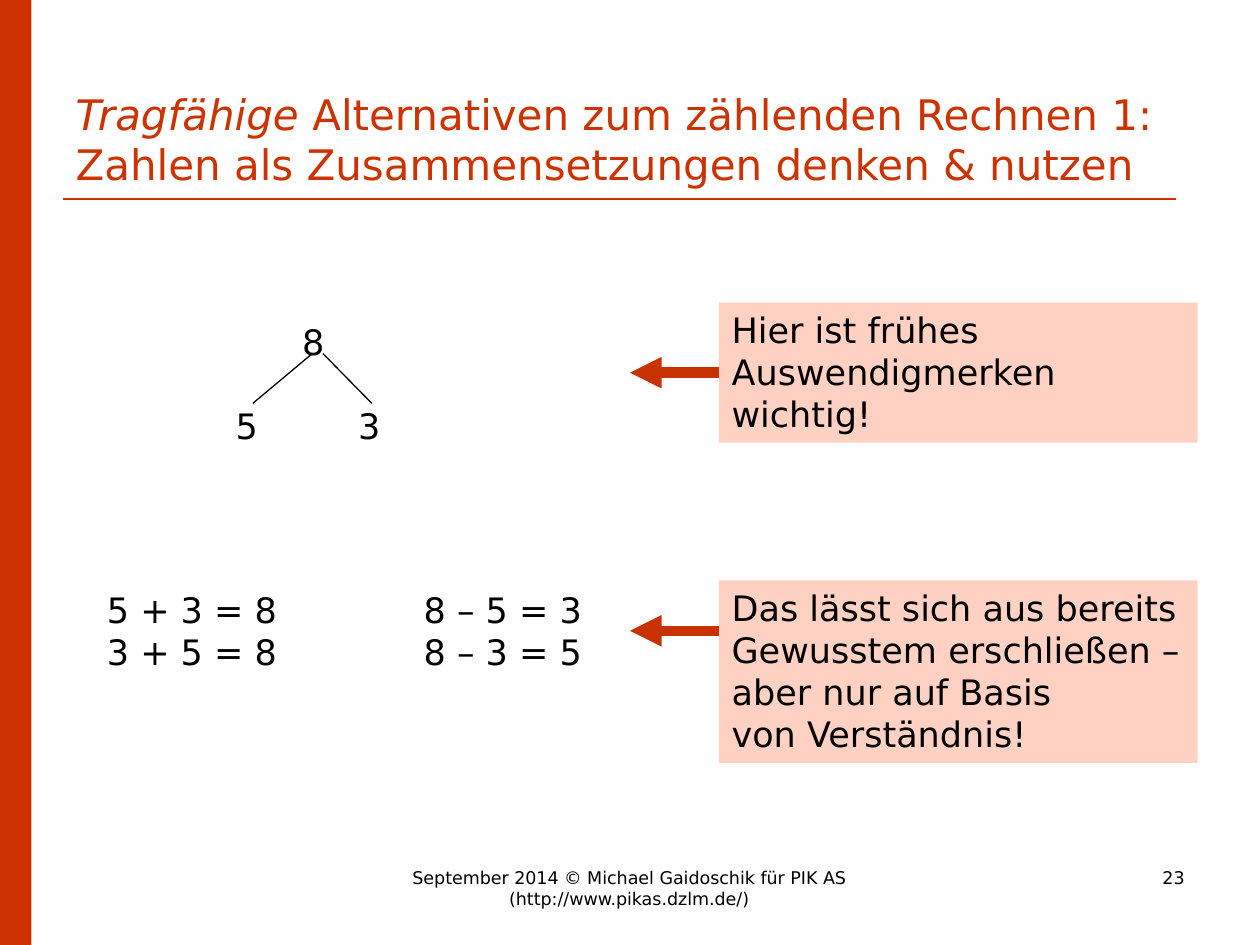
from lxml import etree
from pptx import Presentation
from pptx.dml.color import RGBColor
from pptx.enum import shapes, text
from pptx.oxml import ns
from pptx.util import Pt

FONT = "DejaVu Sans"
COLORS = {"red": "CC3300", "arrow": "C83200", "box": "FFD1C2", "black": "000000"}


def write(shape, paragraphs, size=20, color="black", align=text.PP_ALIGN.LEFT, wrap=True):
    """Fill a shape with paragraphs; each is a list of (words, italic) runs or "\\v" breaks."""
    frame = shape.text_frame
    frame.word_wrap = wrap
    for index, runs in enumerate(paragraphs):
        paragraph = frame.paragraphs[0] if index == 0 else frame.add_paragraph()
        paragraph.alignment = align
        for item in runs:
            if item == "\v":
                paragraph.add_line_break()
                continue
            run = paragraph.add_run()
            run.text, run.font.italic = item
            run.font.name, run.font.size = FONT, Pt(size)
            run.font.color.rgb = RGBColor.from_string(COLORS[color])
    return frame


def draw_line(x1, y1, x2, y2, color, width, arrow=False):
    line = slide.shapes.add_connector(
        shapes.MSO_CONNECTOR.STRAIGHT, Pt(x1), Pt(y1), Pt(x2), Pt(y2))
    line.line.color.rgb = RGBColor.from_string(COLORS[color])
    line.line.width = Pt(width)
    if arrow:
        etree.SubElement(line.line._get_or_add_ln(), ns.qn("a:tailEnd"), type="triangle")
    etree.SubElement(line._element.spPr, ns.qn("a:effectLst"))


presentation = Presentation()
presentation.slide_width, presentation.slide_height = Pt(720), Pt(540)
slide = presentation.slides.add_slide(presentation.slide_layouts[5])

# Side bar, title and rule
bar = slide.shapes.add_shape(shapes.MSO_SHAPE.RECTANGLE, 0, 0, Pt(18), Pt(540))
bar.shadow.inherit = False
bar.fill.solid()
bar.fill.fore_color.rgb = RGBColor.from_string(COLORS["red"])
bar.line.fill.background()

title = slide.shapes.title
title.left, title.top, title.width, title.height = Pt(36), Pt(21.6), Pt(669.6), Pt(90)
title_frame = write(title, [[
    ("Tragfähige", True), (" Alternativen zum zählenden Rechnen 1:", False), "\v",
    ("Zahlen als Zusammensetzungen denken & nutzen", False)]], size=24, color="red")
title_frame.vertical_anchor = text.MSO_ANCHOR.BOTTOM
title_frame.auto_size = text.MSO_AUTO_SIZE.NONE
draw_line(36, 113.75, 672, 113.75, "red", 1.5)

# Number bond: the whole above its two parts, placed by tab stops
bond = slide.shapes.add_textbox(Pt(127.5), Pt(179.5), Pt(120), Pt(79))
bond_frame = write(bond, [[("\t8", False)], [("5\t3", False)]])
for paragraph, stop in zip(bond_frame.paragraphs, (38, 70)):
    tabs = etree.SubElement(paragraph._p.get_or_add_pPr(), ns.qn("a:tabLst"))
    etree.SubElement(tabs, ns.qn("a:tab"), pos=str(Pt(stop)), algn="l")
bond_frame.paragraphs[1].space_before = Pt(24)
draw_line(178.5, 202, 144.5, 230.5, "black", 0.75)
draw_line(184.5, 202, 212.5, 230.5, "black", 0.75)

# Equations
for left, width, equations in [
        (54, 114, ["5 + 3 = 8", "3 + 5 = 8"]),
        (235, 110, ["8 – 5 = 3", "8 – 3 = 5"])]:
    box = slide.shapes.add_textbox(Pt(left), Pt(332.5), Pt(width), Pt(55.5))
    write(box, [[(equation, False)] for equation in equations], wrap=False)

# Comments with arrows pointing left
for top, height, arrow_y, paragraphs in [
        (173, 80, 213, [
            [("Hier ist frühes", False)],
            [("Auswendigmerken", False)],
            [("wichtig!", False)]]),
        (331.75, 104.25, 360.5, [
            [("Das lässt sich aus bereits", False), "\v", ("Gewusstem erschließen –", False)],
            [("aber nur auf Basis", False)],
            [("von Verständnis!", False)]])]:
    comment = slide.shapes.add_textbox(Pt(411), Pt(top), Pt(273.5), Pt(height))
    comment.fill.solid()
    comment.fill.fore_color.rgb = RGBColor.from_string(COLORS["box"])
    write(comment, paragraphs)
    draw_line(411, arrow_y, 360, arrow_y, "arrow", 6, arrow=True)

# Footer and slide number
for left, width, words, align in [
        (206.5, 306, "September 2014 © Michael Gaidoschik für PIK AS (http://www.pikas.dzlm.de/)",
         text.PP_ALIGN.CENTER),
        (516, 168, "23", text.PP_ALIGN.RIGHT)]:
    footer = slide.shapes.add_textbox(Pt(left), Pt(492), Pt(width), Pt(36))
    write(footer, [[(words, False)]], size=10, align=align)

presentation.save("out.pptx")
